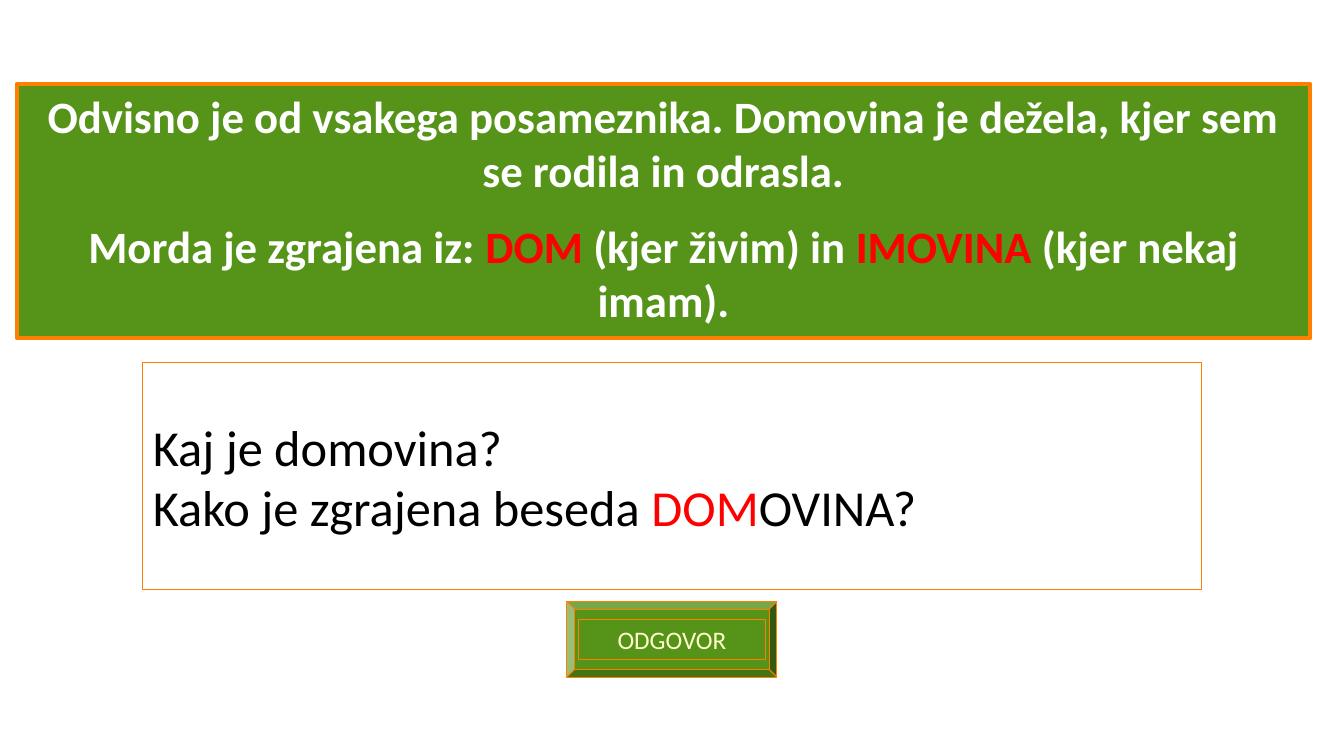
"""Build a quiz slide with an answer panel, a question and an answer button."""
from pptx import Presentation
from pptx.dml.color import RGBColor
from pptx.enum.shapes import MSO_SHAPE as Kind
from pptx.enum.text import MSO_ANCHOR as Anchor, MSO_AUTO_SIZE as Auto, PP_ALIGN as Align
from pptx.util import Inches, Pt

WIDE, HIGH = Inches(13.333), Inches(7.5)
COLS, ROWS = 160, 90
GREEN, ORANGE, RED = "569319", "FF7F00", "FF0000"
WHITE, BLACK, CREAM = "FFFFFF", "000000", "FFFFCC"


def tint(color, code):
    """Set a colour from a hex string."""
    color.rgb = RGBColor.from_string(code)


def grid(col, row, cols, rows):
    """Turn grid units into slide lengths."""
    return [int(n) for n in (WIDE * col / COLS, HIGH * row / ROWS,
                             WIDE * cols / COLS, HIGH * rows / ROWS)]


def paint(shape, fill, width):
    """Give a shape its fill and orange outline."""
    shape.fill.solid()
    tint(shape.fill.fore_color, fill)
    tint(shape.line.color, ORANGE)
    shape.line.width = Pt(width)


def block(shapes, kind, place, width=0.75):
    """Add a green shape without a shadow."""
    shape = shapes.add_shape(kind, *grid(*place))
    shape.shadow.inherit = False
    paint(shape, GREEN, width)
    return shape


def write(shape, lines, size, code, align, anchor, bold=False, gap=0):
    """Write paragraphs in which every second piece is red."""
    frame = shape.text_frame
    frame.word_wrap = True
    frame.auto_size = Auto.NONE
    frame.vertical_anchor = anchor
    for i, line in enumerate(lines):
        para = frame.add_paragraph() if i else frame.paragraphs[0]
        para.alignment = align
        para.space_before = Pt(gap if i else 0)
        for j, piece in enumerate(line):
            run = para.add_run()
            run.text = piece
            font = run.font
            font.name, font.size, font.bold = "Calibri", Pt(size), bold
            tint(font.color, RED if j % 2 else code)


def answer(slide):
    """Add the answer panel."""
    panel = block(slide.shapes, Kind.RECTANGLE, (2, 10, 154, 30.25), 3)
    write(panel, [
        ["Odvisno je od vsakega posameznika. Domovina je dežela, kjer sem se rodila in odrasla."],
        ["Morda je zgrajena iz: ", "DOM", " (kjer živim) in ", "IMOVINA", " (kjer nekaj imam)."],
    ], 32, WHITE, Align.CENTER, Anchor.TOP, bold=True, gap=16)


def question(slide):
    """Place and fill the title with the question."""
    title = slide.shapes.title
    title.left, title.top, title.width, title.height = grid(17, 43.2, 126, 27)
    paint(title, WHITE, 0.75)
    write(title, [
        ["Kaj je domovina?"],
        ["Kako je zgrajena beseda ", "DOM", "OVINA?"],
    ], 36, BLACK, Align.LEFT, Anchor.MIDDLE)


def button(slide):
    """Add the grouped answer button."""
    group = slide.shapes.add_group_shape()
    bevel = block(group.shapes, Kind.BEVEL, (67.5, 71.6, 25, 9))
    bevel.adjustments[0] = 0.104
    label = block(group.shapes, Kind.RECTANGLE, (68.9, 73.7, 22.2, 4.8))
    write(label, [["ODGOVOR"]], 18, CREAM, Align.CENTER, Anchor.TOP)


def main():
    """Build and save the slide."""
    deck = Presentation()
    deck.slide_width, deck.slide_height = WIDE, HIGH
    slide = deck.slides.add_slide(deck.slide_layouts[5])
    button(slide)
    answer(slide)
    question(slide)
    deck.save("out.pptx")


if __name__ == "__main__":
    main()
